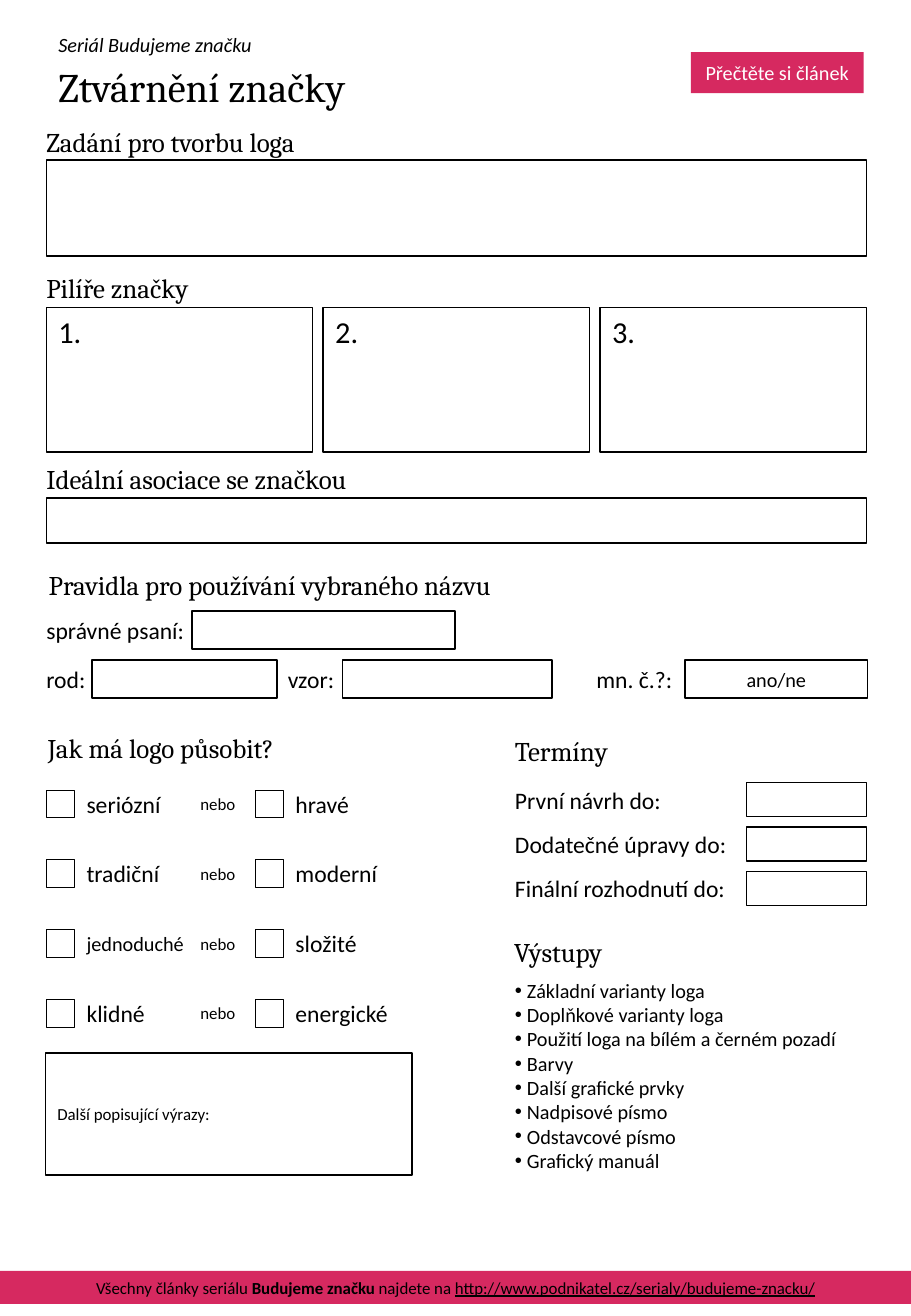
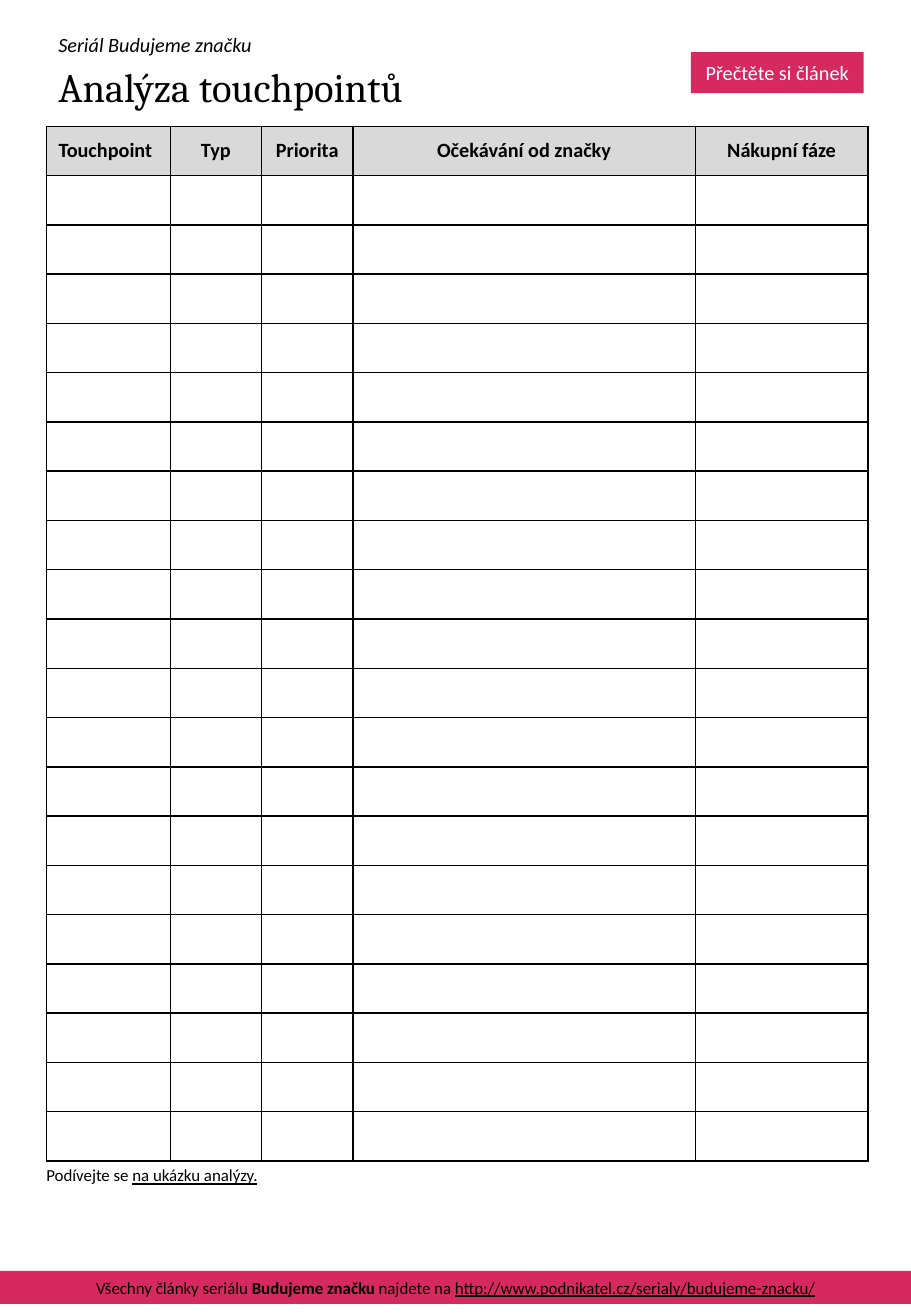
from pptx import Presentation
from pptx.dml.color import RGBColor
from pptx.enum import shapes, text as t
from pptx.oxml import parse_xml
from pptx.oxml.ns import nsdecls
from pptx.util import Cm, Pt

BLACK = RGBColor(0x00, 0x00, 0x00)
WHITE = RGBColor(0xFF, 0xFF, 0xFF)
PINK = RGBColor(0xD6, 0x29, 0x60)
GREY = RGBColor(0xD9, 0xD9, 0xD9)
BODY, DISPLAY = "Calibri", "Cambria"
LEFT, CENTER = t.PP_ALIGN.LEFT, t.PP_ALIGN.CENTER
TOP, MIDDLE = t.MSO_ANCHOR.TOP, t.MSO_ANCHOR.MIDDLE

# All measures below are in centimetres.
PAGE_W, PAGE_H = 19.05, 27.51
MARGIN, CONTENT_W = 0.97, 17.15
INSET = 0.25
LABEL_H = 0.86


def style(font, size, color=BLACK, face=BODY):
    font.size, font.name, font.color.rgb = Pt(size), face, color


def put_text(frame, content, size, color=BLACK, face=BODY, align=LEFT, anchor=TOP):
    frame.word_wrap = True
    frame.vertical_anchor = anchor
    frame.text = content
    for paragraph in frame.paragraphs:
        paragraph.alignment = align
        for run in paragraph.runs:
            style(run.font, size, color, face)


def add_runs(paragraph, pieces, size):
    """Adds (text, attribute) pieces; the attribute is "bold", "underline" or None."""
    for content, attribute in pieces:
        run = paragraph.add_run()
        run.text = content
        style(run.font, size)
        if attribute:
            setattr(run.font, attribute, True)


def text_box(slide, left, top, width, height, content, size, **options):
    frame = slide.shapes.add_textbox(Cm(left), Cm(top), Cm(width), Cm(height)).text_frame
    put_text(frame, content, size, **options)
    frame.margin_right = 0
    return frame


def rectangle(slide, left, top, width, height, fill=None, line=None):
    shape = slide.shapes.add_shape(shapes.MSO_SHAPE.RECTANGLE,
                                   Cm(left), Cm(top), Cm(width), Cm(height))
    shape.shadow.inherit = False
    if fill is None:
        shape.fill.background()
    else:
        shape.fill.solid()
        shape.fill.fore_color.rgb = fill
    if line is None:
        shape.line.fill.background()
    else:
        shape.line.color.rgb = BLACK
        shape.line.width = Pt(line)
    return shape


def field(slide, left, top, width, height):
    return rectangle(slide, left, top, width, height, line=1)


def heading(slide, left, top, content):
    """Section heading whose letters begin at left."""
    text_box(slide, left - INSET, top, 11, 0.94, content, 16, face=DISPLAY)


def label(slide, left, middle, width, content, size=14):
    """One line of text beginning at left and centred on the height middle."""
    text_box(slide, left - INSET, middle - LABEL_H / 2, width + INSET, LABEL_H,
             content, size, anchor=MIDDLE)


def footer(slide, top):
    band = rectangle(slide, 0, top, PAGE_W, 0.69, fill=PINK)
    paragraph = band.text_frame.paragraphs[0]
    paragraph.alignment = CENTER
    add_runs(paragraph, [
        ("Všechny články seriálu ", None),
        ("Budujeme značku ", "bold"),
        ("najdete na ", None),
        ("http://www.podnikatel.cz/serialy/budujeme-znacku/", "underline"),
    ], 10)


def header(slide, left, top, width, title):
    series = text_box(slide, left, top, 10.16, 0.76, "Seriál Budujeme značku", 12)
    series.paragraphs[0].runs[0].font.italic = True
    text_box(slide, left, top + 0.53, width, 1.45, title, 24, face=DISPLAY, anchor=MIDDLE)
    button = rectangle(slide, left + width - 3.67, top + 0.53, 3.61, 0.86, fill=PINK)
    put_text(button.text_frame, "Přečtěte si článek", 12, WHITE, align=CENTER, anchor=MIDDLE)


def page(deck, title):
    slide = deck.slides.add_slide(deck.slide_layouts[6])
    footer(slide, 26.57)
    header(slide, MARGIN, 0.56, CONTENT_W, title)
    return slide


def answer_section(slide, left, top, width, height, title):
    heading(slide, left, top, title)
    field(slide, left, top + 0.86, width, height)


def pillars(slide, left, top, width, gap=0.22):
    heading(slide, left, top, "Pilíře značky")
    pillar_w = (width - 2 * gap) / 3
    for i in range(3):
        pillar = field(slide, left + i * (pillar_w + gap), top + 0.87, pillar_w, 3.02)
        put_text(pillar.text_frame, f"{i + 1}.", 18)


def name_rules(slide, left, top):
    heading(slide, left + 0.05, top, "Pravidla pro používání vybraného názvu")
    field_h = 0.79
    entries = [  # caption, caption x, field x, field width, row, answer
        ("správné psaní:", 0, 3.04, 5.51, 0, ""),
        ("rod:", 0, 0.96, 3.86, 1, ""),
        ("vzor:", 5.05, 6.19, 4.39, 1, ""),
        ("mn. č.?:", 11.5, 13.36, 3.81, 1, "ano/ne"),
    ]
    for caption, caption_x, field_x, field_w, row, answer in entries:
        y = top + 1.02 * (row + 1)
        entry = field(slide, left + field_x, y, field_w, field_h)
        if answer:
            put_text(entry.text_frame, answer, 12, align=CENTER, anchor=MIDDLE)
        label(slide, left + caption_x, y + field_h / 2, field_x - caption_x, caption)


def logo_character(slide, left, top):
    heading(slide, left + 0.03, top, "Jak má logo působit?")
    check, pitch, second_column = 0.58, 1.46, 4.37
    pairs = [("seriózní", "hravé"), ("tradiční", "moderní"),
             ("jednoduché", "složité"), ("klidné", "energické")]
    for row, pair in enumerate(pairs):
        y = top + 1.35 + row * pitch
        middle = y + check / 2
        for column, trait in enumerate(pair):
            x = left + column * second_column
            rectangle(slide, x, y, check, check, fill=WHITE, line=0.25)
            label(slide, x + 0.84, middle, 3, trait, 12 if trait == "jednoduché" else 14)
        label(slide, left + 3.22, middle, 1.1, "nebo", 10)
    other = field(slide, left - 0.02, top + 6.86, 7.67, 2.54)
    put_text(other.text_frame, "Další popisující výrazy:", 10, anchor=MIDDLE)


def deadlines(slide, left, top, width):
    heading(slide, left, top, "Termíny")
    field_w, field_h, pitch = 2.51, 0.71, 0.93
    captions = ["První návrh do:", "Dodatečné úpravy do:", "Finální rozhodnutí do:"]
    for row, caption in enumerate(captions):
        y = top + 1.12 + row * pitch
        field(slide, left + width - field_w, y, field_w, field_h)
        label(slide, left, y + field_h / 2, width - field_w, caption)


def outputs(slide, left, top, width):
    heading(slide, left - 0.02, top, "Výstupy")
    items = ["Základní varianty loga", "Doplňkové varianty loga",
             "Použití loga na bílém a černém pozadí", "Barvy", "Další grafické prvky",
             "Nadpisové písmo", "Odstavcové písmo", "Grafický manuál"]
    frame = text_box(slide, left - INSET, top + 0.89, width + INSET, 4.37,
                     "\n".join(items), 12)
    for paragraph in frame.paragraphs:
        properties = paragraph._p.get_or_add_pPr()
        properties.set("marL", str(Cm(INSET)))
        properties.set("indent", str(-Cm(INSET)))
        properties.append(parse_xml(f'<a:buFont {nsdecls("a")} typeface="Arial"/>'))
        properties.append(parse_xml(f'<a:buChar {nsdecls("a")} char="•"/>'))


def outline_cell(cell):
    properties = cell._tc.get_or_add_tcPr()
    for i, side in enumerate(("lnL", "lnR", "lnT", "lnB")):
        properties.insert(i, parse_xml(
            f'<a:{side} {nsdecls("a")} w="{Pt(1)}"><a:solidFill>'
            f'<a:srgbClr val="{BLACK}"/></a:solidFill></a:{side}>'))


def touchpoint_table(slide, left, top, row_count=21, row_h=1.03):
    columns = [("Touchpoint", 2.59), ("Typ", 1.91), ("Priorita", 1.91),
               ("Očekávání od značky", 7.16), ("Nákupní fáze", 3.61)]
    width = sum(column_w for _, column_w in columns)
    table = slide.shapes.add_table(row_count, len(columns), Cm(left), Cm(top),
                                   Cm(width), Cm(row_count * row_h)).table
    table.first_row = table.horz_banding = False
    for row in table.rows:
        row.height = Cm(row_h)
    for i, (title, column_w) in enumerate(columns):
        table.columns[i].width = Cm(column_w)
        head = table.cell(0, i)
        put_text(head.text_frame, title, 12, align=CENTER if i else LEFT)
        head.text_frame.paragraphs[0].runs[0].font.bold = True
        head.vertical_anchor = MIDDLE
        head.fill.solid()
        head.fill.fore_color.rgb = GREY
    for cell in table.iter_cells():
        cell.margin_top = cell.margin_bottom = Cm(0.1)
        if not cell.text:
            cell.fill.background()
        outline_cell(cell)


def example_note(slide, left, top):
    frame = text_box(slide, left - INSET, top, 7.98, 0.69, "", 10)
    add_runs(frame.paragraphs[0],
             [("Podívejte se ", None), ("na ukázku analýzy.", "underline")], 10)


def brand_design_slide(deck):
    slide = page(deck, "Ztvárnění značky")
    answer_section(slide, MARGIN, 2.49, CONTENT_W, 2.01, "Zadání pro tvorbu loga")
    pillars(slide, MARGIN, 5.56, CONTENT_W)
    answer_section(slide, MARGIN, 9.55, CONTENT_W, 0.94, "Ideální asociace se značkou")
    name_rules(slide, MARGIN, 11.76)
    logo_character(slide, MARGIN, 15.16)
    right_column = 10.77
    right_w = MARGIN + CONTENT_W - right_column
    deadlines(slide, right_column, 15.24, right_w)
    outputs(slide, right_column, 19.43, right_w)


def touchpoint_slide(deck):
    slide = page(deck, "Analýza touchpointů")
    touchpoint_table(slide, MARGIN, 2.64)
    example_note(slide, MARGIN, 24.23)


def main():
    deck = Presentation()
    deck.slide_width, deck.slide_height = Cm(PAGE_W), Cm(PAGE_H)
    brand_design_slide(deck)
    touchpoint_slide(deck)
    deck.save("out.pptx")


if __name__ == "__main__":
    main()
